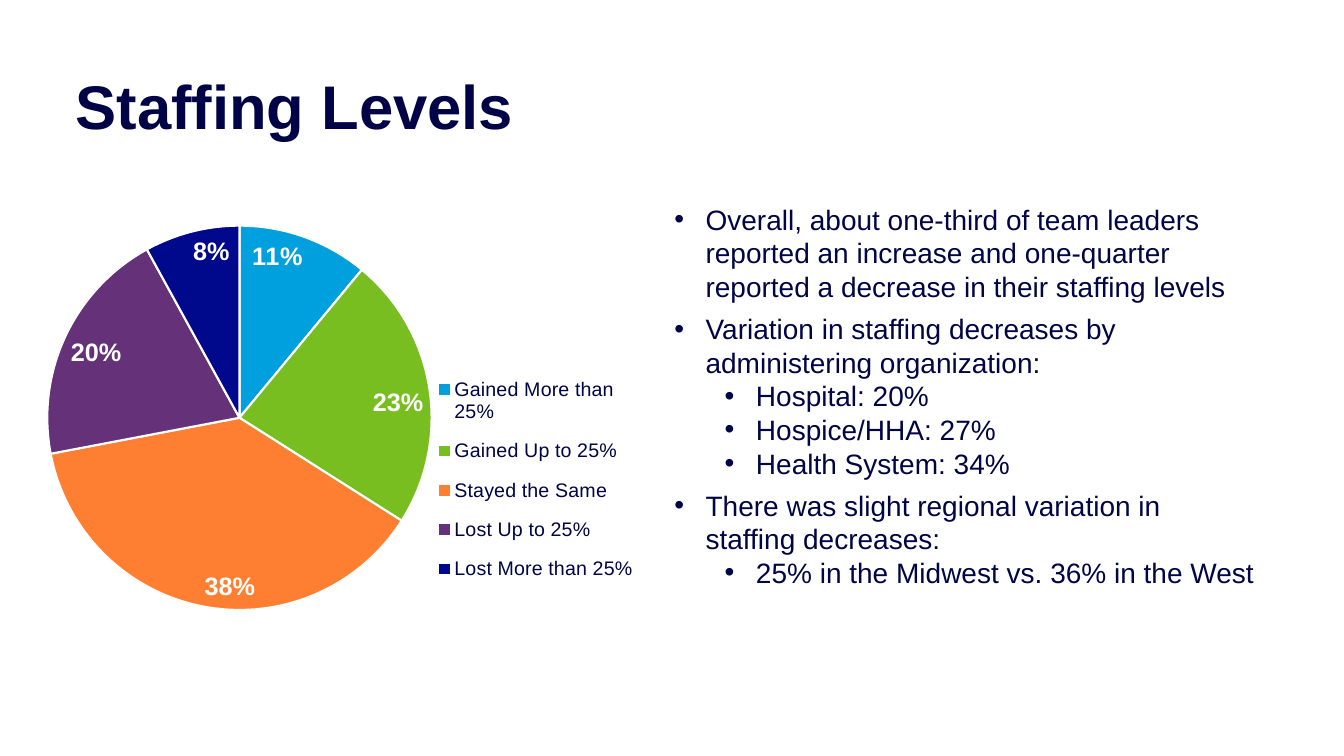
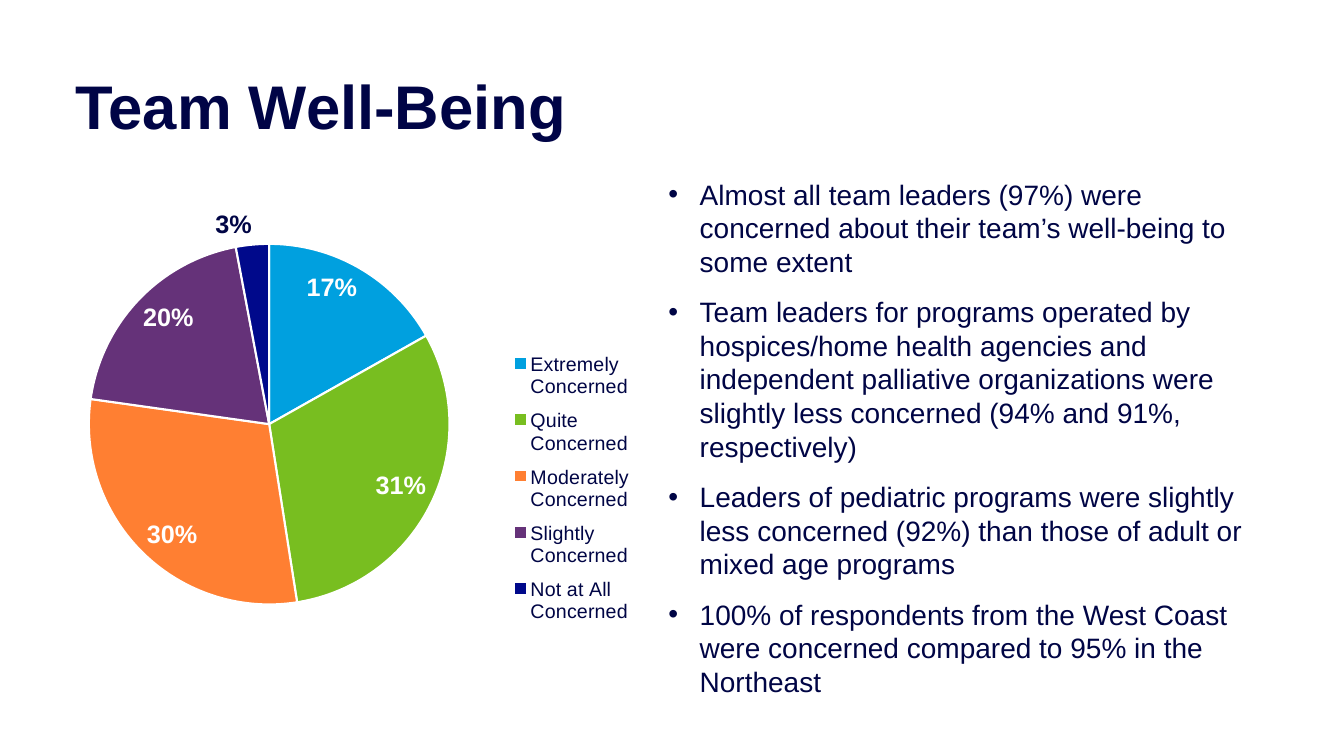
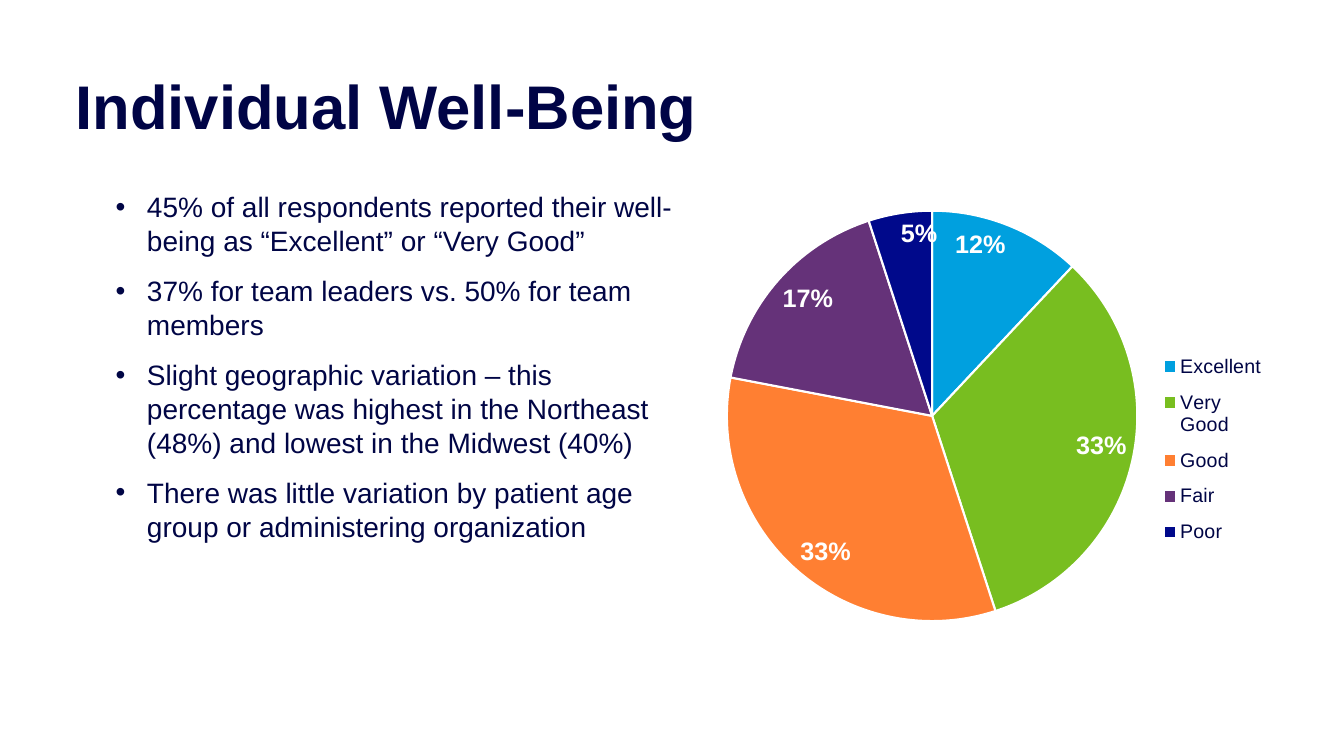
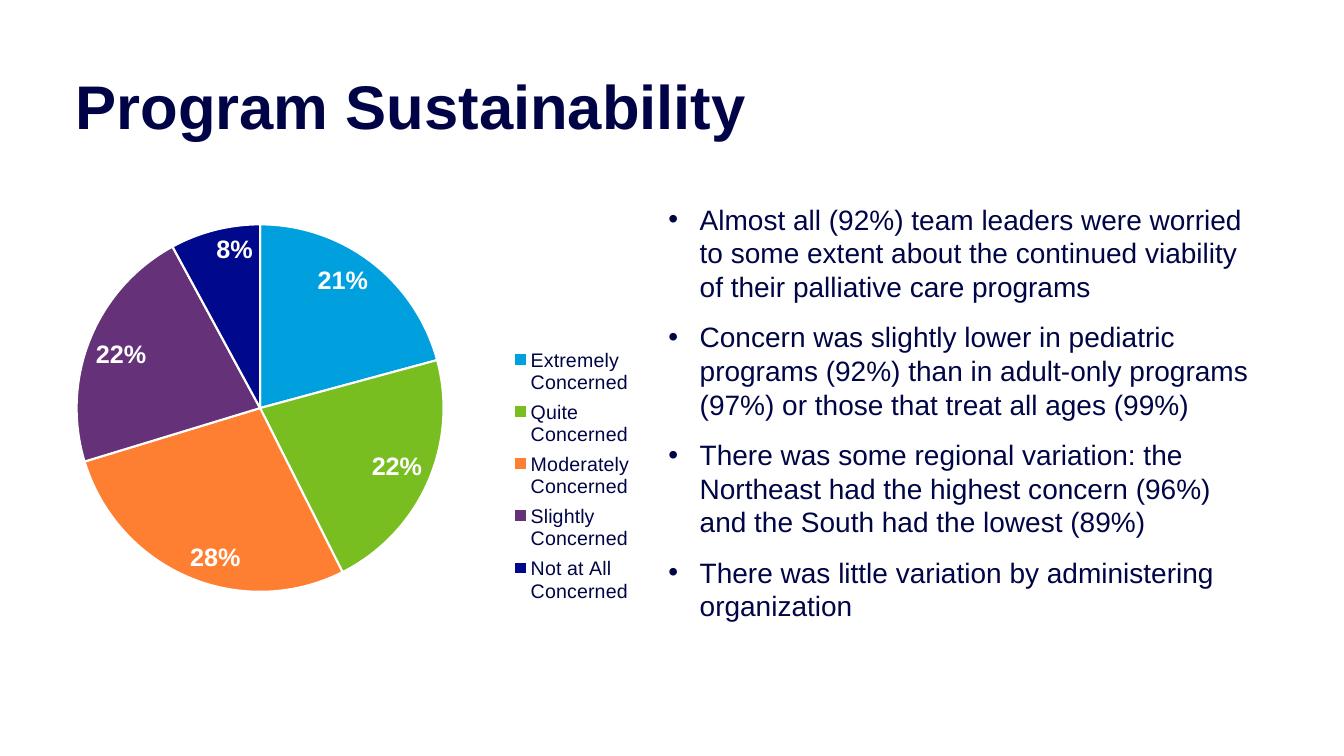
import dataclasses

import lxml.etree
import pptx
import pptx.chart.data
import pptx.dml.color
import pptx.enum.chart
import pptx.enum.text
import pptx.oxml.ns
import pptx.util

COLUMNS, ROWS = 160, 90
CELL = pptx.util.Inches(1 / 12)


@dataclasses.dataclass(frozen=True)
class Theme:
    font: str = "Arial"
    title_color: str = "000446"
    text_color: str = "000545"
    light: str = "FFFFFF"
    slices: tuple[str, ...] = ("00A0DF", "78BE20", "FF7F32", "653279", "00098B")
    title_size: int = 44
    body_size: int = 20
    body_leading: int = 24
    label_size: int = 18
    legend_size: int = 14


@dataclasses.dataclass(frozen=True)
class Box:
    """A place in grid columns and rows, or in shares of a chart."""
    left: float
    top: float
    width: float
    height: float

    def lengths(self) -> tuple[int, ...]:
        return tuple(round(n * CELL) for n in dataclasses.astuple(self))


@dataclasses.dataclass(frozen=True)
class Bullet:
    text: str
    level: int = 0
    after: int = 12


@dataclasses.dataclass(frozen=True)
class Pie:
    box: Box
    plot: Box
    legend: Box
    categories: tuple[str, ...]
    values: tuple[int, ...]
    outside: tuple[int, ...] = ()


@dataclasses.dataclass(frozen=True)
class Page:
    title: str
    pie: Pie
    text_box: Box
    bullets: tuple[Bullet, ...]


THEME = Theme()
TITLE_BOX = Box(9, 9, 120, 8)
LEFT_CHART = Box(9, 19.8, 68.3, 58.1)
RIGHT_CHART = Box(82.9, 19.8, 68.3, 58.1)
CONCERN = ("Extremely Concerned", "Quite Concerned", "Moderately Concerned",
           "Slightly Concerned", "Not at All Concerned")

PAGES = (
    Page(
        "Staffing Levels",
        Pie(Box(2.9, 18.5, 73.8, 59.8), Box(0.037, 0.139, 0.62, 0.767), Box(0.66, 0.41, 0.33, 0.47),
            ("Gained More than 25%", "Gained Up to 25%", "Stayed the Same",
             "Lost Up to 25%", "Lost More than 25%"),
            (11, 23, 38, 20, 8)),
        Box(79.1, 23.5, 71.5, 47.6),
        (
            Bullet("Overall, about one-third of team leaders reported an increase and "
                   "one-quarter reported a decrease in their staffing levels", after=6),
            Bullet("Variation in staffing decreases by administering organization:", after=0),
            Bullet("Hospital: 20%", 1, 0),
            Bullet("Hospice/HHA: 27%", 1, 0),
            Bullet("Health System: 34%", 1, 6),
            Bullet("There was slight regional variation in staffing decreases:", after=0),
            Bullet("25% in the Midwest vs. 36% in the West", 1, 0),
        ),
    ),
    Page(
        "Team Well-Being",
        Pie(LEFT_CHART, Box(0.023, 0.159, 0.629, 0.739), Box(0.75, 0.36, 0.23, 0.6),
            CONCERN, (17, 31, 30, 20, 3), outside=(4,)),
        Box(78.4, 20.5, 71.5, 63.8),
        (
            Bullet("Almost all team leaders (97%) were concerned about their team’s "
                   "well-being to some extent"),
            Bullet("Team leaders for programs operated by hospices/home health agencies and "
                   "independent palliative organizations were slightly less concerned "
                   "(94% and 91%, respectively)"),
            Bullet("Leaders of pediatric programs were slightly less concerned (92%) than "
                   "those of adult or mixed age programs"),
            Bullet("100% of respondents from the West Coast were concerned compared to 95% "
                   "in the Northeast"),
        ),
    ),
    Page(
        "Individual Well-Being",
        Pie(RIGHT_CHART, Box(0.053, 0.091, 0.716, 0.841), Box(0.805, 0.36, 0.19, 0.44),
            ("Excellent", "Very Good", "Good", "Fair", "Poor"), (12, 33, 33, 17, 5)),
        Box(12.6, 22, 71.5, 55.7),
        (
            Bullet("45% of all respondents reported their well-being as “Excellent” or "
                   "“Very Good”"),
            Bullet("37% for team leaders vs. 50% for team members"),
            Bullet("Slight geographic variation – this percentage was highest in the "
                   "Northeast (48%) and lowest in the Midwest (40%)"),
            Bullet("There was little variation by patient age group or administering "
                   "organization"),
        ),
    ),
    Page(
        "Program Sustainability",
        Pie(LEFT_CHART, Box(0, 0.119, 0.641, 0.753), Box(0.75, 0.36, 0.23, 0.55),
            CONCERN, (21, 22, 28, 22, 8)),
        Box(78.4, 23.5, 71.5, 51.7),
        (
            Bullet("Almost all (92%) team leaders were worried to some extent about the "
                   "continued viability of their palliative care programs"),
            Bullet("Concern was slightly lower in pediatric programs (92%) than in adult-only "
                   "programs (97%) or those that treat all ages (99%)"),
            Bullet("There was some regional variation: the Northeast had the highest concern "
                   "(96%) and the South had the lowest (89%)"),
            Bullet("There was little variation by administering organization"),
        ),
    ),
)


def rgb(color: str) -> pptx.dml.color.RGBColor:
    return pptx.dml.color.RGBColor.from_string(color)


def style_font(font, size: int, color: str, bold: bool = False) -> None:
    font.name = THEME.font
    font.size = pptx.util.Pt(size)
    font.bold = bold
    font.color.rgb = rgb(color)


def add_title(s, title: str) -> None:
    tf = s.shapes.add_textbox(*TITLE_BOX.lengths()).text_frame
    tf.word_wrap = True
    tf.vertical_anchor = pptx.enum.text.MSO_ANCHOR.BOTTOM
    tf.margin_left = tf.margin_top = tf.margin_right = tf.margin_bottom = 0
    tf.text = title
    p = tf.paragraphs[0]
    p.line_spacing = 0.9
    style_font(p.runs[0].font, THEME.title_size, THEME.title_color, bold=True)


def add_bullets(s, box: Box, bullets: tuple[Bullet, ...]) -> None:
    tf = s.shapes.add_textbox(*box.lengths()).text_frame
    tf.word_wrap = True
    tf.auto_size = pptx.enum.text.MSO_AUTO_SIZE.SHAPE_TO_FIT_TEXT
    hanging = pptx.util.Inches(0.31)
    for i, bullet in enumerate(bullets):
        p = tf.add_paragraph() if i else tf.paragraphs[0]
        p.text = bullet.text
        p.level = bullet.level
        pPr = p._p.get_or_add_pPr()
        pPr.set("marL", str(hanging + bullet.level * pptx.util.Inches(0.5)))
        pPr.set("indent", str(-hanging))
        for tag, key, value in (("a:buFont", "typeface", THEME.font), ("a:buChar", "char", "•")):
            lxml.etree.SubElement(pPr, pptx.oxml.ns.qn(tag)).set(key, value)
        p.line_spacing = pptx.util.Pt(THEME.body_leading)
        p.space_after = pptx.util.Pt(bullet.after)
        style_font(p.runs[0].font, THEME.body_size, THEME.text_color)


def set_layout(parent, index: int, box: Box, inner: bool = False) -> None:
    """Place a plot area or a legend by shares of its chart."""
    qn = pptx.oxml.ns.qn
    for old in parent.findall(qn("c:layout")):
        parent.remove(old)
    layout = lxml.etree.Element(qn("c:layout"))
    manual = lxml.etree.SubElement(layout, qn("c:manualLayout"))
    settings = [("layoutTarget", "inner")] if inner else []
    settings += [("xMode", "edge"), ("yMode", "edge")]
    settings += zip("xywh", dataclasses.astuple(box))
    for tag, value in settings:
        lxml.etree.SubElement(manual, qn(f"c:{tag}")).set("val", str(value))
    parent.insert(index, layout)


def add_pie(s, pie: Pie) -> None:
    data = pptx.chart.data.CategoryChartData()
    data.categories = pie.categories
    data.add_series("Series 1", pie.values)
    chart = s.shapes.add_chart(
        pptx.enum.chart.XL_CHART_TYPE.PIE, *pie.box.lengths(), data).chart
    chart.has_title = False
    style_font(chart.font, THEME.legend_size, THEME.text_color)
    chart.has_legend = True
    legend = chart.legend
    legend.position = pptx.enum.chart.XL_LEGEND_POSITION.RIGHT
    legend.include_in_layout = False
    style_font(legend.font, THEME.legend_size, THEME.text_color)
    set_layout(legend._element, 1, pie.legend)
    set_layout(chart._chartSpace.chart.plotArea, 0, pie.plot, inner=True)

    plot = chart.plots[0]
    plot.vary_by_categories = True
    series = plot.series[0]
    for i, color in enumerate(THEME.slices):
        part = series.points[i].format
        part.fill.solid()
        part.fill.fore_color.rgb = rgb(color)
        part.line.color.rgb = rgb(THEME.light)
        part.line.width = pptx.util.Pt(1.5)

    labels = series.data_labels
    labels.show_percentage = True
    labels.show_value = False
    labels.number_format = "0%"
    labels.number_format_is_linked = False
    labels.position = pptx.enum.chart.XL_LABEL_POSITION.INSIDE_END
    style_font(labels.font, THEME.label_size, THEME.light, bold=True)
    for i in pie.outside:
        label = series.points[i].data_label
        style_font(label.font, THEME.label_size, THEME.text_color, bold=True)
        label.position = pptx.enum.chart.XL_LABEL_POSITION.OUTSIDE_END
    for dLbl in labels._element.findall(pptx.oxml.ns.qn("c:dLbl")):
        dLbl.find(pptx.oxml.ns.qn("c:showVal")).set("val", "0")
        dLbl.find(pptx.oxml.ns.qn("c:showPercent")).set("val", "1")


def main() -> None:
    prs = pptx.Presentation()
    prs.slide_width, prs.slide_height = COLUMNS * CELL, ROWS * CELL
    for page in PAGES:
        s = prs.slides.add_slide(prs.slide_layouts[6])
        add_title(s, page.title)
        add_pie(s, page.pie)
        add_bullets(s, page.text_box, page.bullets)
    prs.save("out.pptx")


if __name__ == "__main__":
    main()
